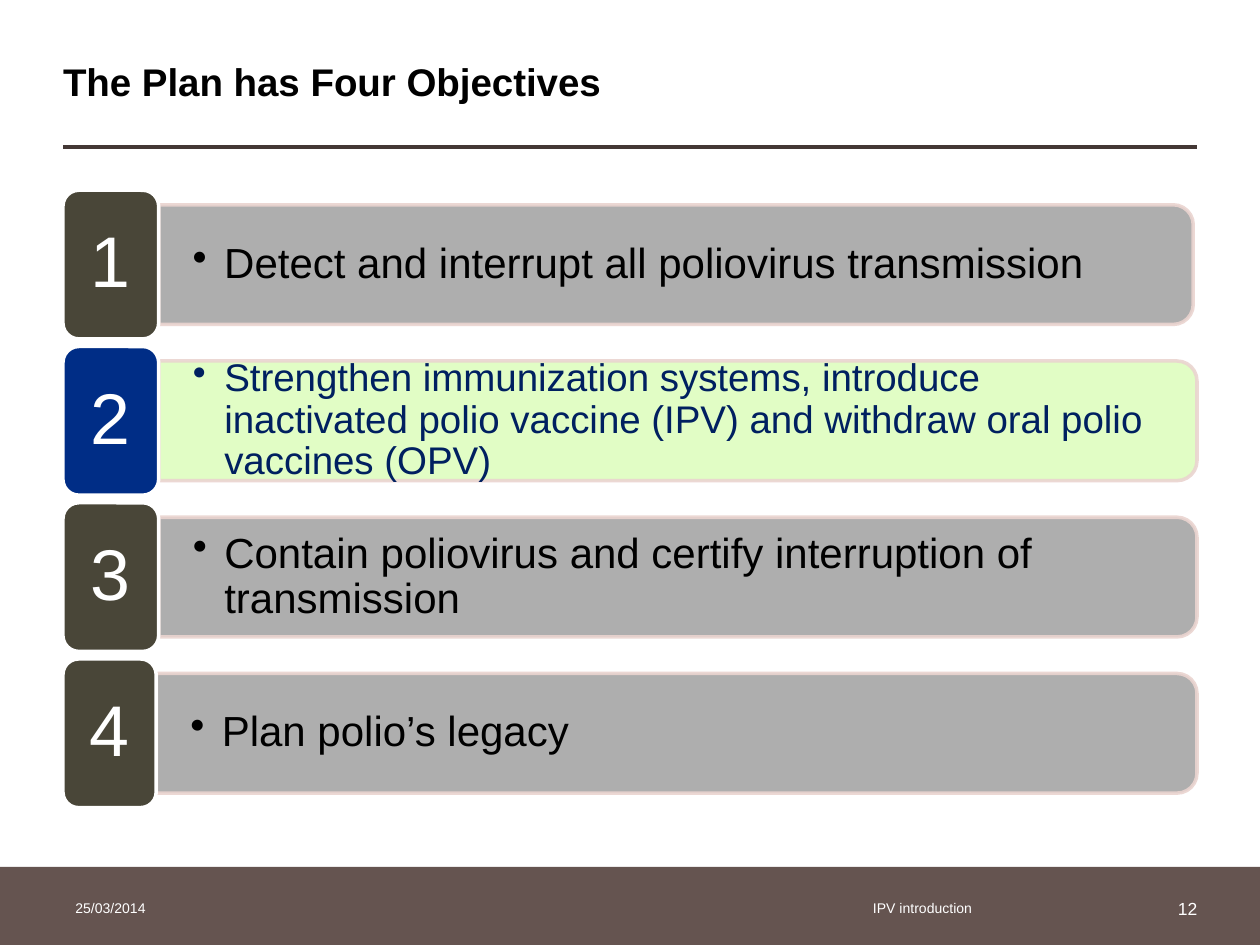
import pptx
import pptx.util
import pptx.dml.color
import pptx.enum.shapes
import pptx.enum.text
import pptx.oxml
import pptx.oxml.ns

Inches, Pt = pptx.util.Inches, pptx.util.Pt
SHAPE = pptx.enum.shapes.MSO_SHAPE
ALIGN = pptx.enum.text.PP_ALIGN
MIDDLE = pptx.enum.text.MSO_ANCHOR.MIDDLE
qn = pptx.oxml.ns.qn

COLORS = {
    "black": "000000", "white": "FFFFFF", "rule": "443835", "footer": "655450",
    "gray": "A6A6A6", "green": "DEFDBF", "edge": "EAD4D0",
    "olive": "494638", "blue": "002D86", "navy": "002060",
}
TITLE = "The Plan has Four Objectives"
# text, size, text colour, bar colour, badge colour, badge width, bar right edge
OBJECTIVES = [
    ("Detect and interrupt all poliovirus transmission",
     24, "black", "gray", "olive", 0.76, 9.47),
    ("Strengthen immunization systems, introduce inactivated polio vaccine (IPV) "
     "and withdraw oral polio vaccines (OPV)",
     22, "navy", "green", "blue", 0.76, 9.5),
    ("Contain poliovirus and certify interruption of transmission",
     24, "black", "gray", "olive", 0.76, 9.5),
    ("Plan polio’s legacy", 24, "black", "gray", "olive", 0.74, 9.5),
]
# text, left, width, size, alignment
FOOTER = [
    ("25/03/2014", 0.5, 2.33, 8, ALIGN.LEFT),
    ("IPV introduction", 6.83, 2.52, 8, ALIGN.LEFT),
    ("12", 9.18, 0.42, 10, ALIGN.RIGHT),
]
LEFT, FIRST_TOP, PITCH = 0.5, 1.51, 1.24
BADGE_H, BAR_H, TEXT_H = 1.18, 0.95, 0.85


def rgb(name):
    return pptx.dml.color.RGBColor.from_string(COLORS[name])


def add_block(s, kind, left, top, width, height, fill, line=None):
    sp = s.shapes.add_shape(kind, Inches(left), Inches(top), Inches(width), Inches(height))
    sp.shadow.inherit = False
    sp.fill.solid()
    sp.fill.fore_color.rgb = rgb(fill)
    if line:
        sp.line.color.rgb = rgb(line)
        sp.line.width = Pt(2)
    else:
        sp.line.fill.background()
    return sp


def add_text_box(s, left, top, width, height):
    tf = s.shapes.add_textbox(Inches(left), Inches(top), Inches(width), Inches(height)).text_frame
    tf.word_wrap = True
    tf.vertical_anchor = MIDDLE
    return tf


def write(tf, text, size, color, align=ALIGN.LEFT, spacing=None, bold=False):
    p = tf.paragraphs[0]
    p.alignment = align
    p.line_spacing = spacing
    r = p.add_run()
    r.text = text
    r.font.name = "Arial"
    r.font.size = Pt(size)
    r.font.bold = bold
    r.font.color.rgb = rgb(color)
    return p


def set_margins(tf, x, y):
    tf.margin_left = tf.margin_right = Inches(x)
    tf.margin_top = tf.margin_bottom = Inches(y)


def add_bullet(p):
    pPr = p._p.get_or_add_pPr()
    pPr.set("marL", str(Inches(0.25)))
    pPr.set("indent", str(Inches(-0.25)))
    pptx.oxml.ns  # namespace map used by qn
    bullet = pPr.makeelement(qn("a:buChar"), {"char": "•"})
    pPr.append(bullet)


def make_translucent(sp):
    """Give the fill and the line 90 % opacity."""
    for clr in sp._element.spPr.iter(qn("a:srgbClr")):
        clr.append(clr.makeelement(qn("a:alpha"), {"val": "90000"}))


def add_objective(s, number, text, size, color, bar_fill, badge_fill, badge_w, right):
    top = FIRST_TOP + (number - 1) * PITCH
    middle = top + BADGE_H / 2
    bar_left = LEFT + badge_w
    length = right - bar_left

    # The bar is drawn upright, then turned so its round corners face right.
    bar = add_block(s, SHAPE.ROUND_2_SAME_RECTANGLE, bar_left + (length - BAR_H) / 2,
                    middle - length / 2, BAR_H, length, bar_fill, "edge")
    bar.rotation = 90
    make_translucent(bar)

    tf = add_text_box(s, bar_left, middle - TEXT_H / 2, length - 0.05, TEXT_H)
    set_margins(tf, 0.27, 0.14)
    add_bullet(write(tf, text, size, color, spacing=0.9))

    badge = add_block(s, SHAPE.ROUNDED_RECTANGLE, LEFT, top, badge_w, BADGE_H,
                      badge_fill, "white")
    badge.text_frame.vertical_anchor = MIDDLE
    set_margins(badge.text_frame, 0.1, 0.1)
    write(badge.text_frame, str(number), 41, "white", ALIGN.CENTER, 0.9)


def main():
    prs = pptx.Presentation()
    prs.slide_width, prs.slide_height = Inches(10), Inches(7.5)
    s = prs.slides.add_slide(prs.slide_layouts[5])

    title = s.shapes.title
    title.left, title.top = Inches(LEFT), Inches(0.5)
    title.width, title.height = Inches(9), Inches(0.33)
    set_margins(title.text_frame, 0, 0)
    write(title.text_frame, TITLE, 22, "black", spacing=0.9, bold=True)

    rule = s.shapes.add_connector(pptx.enum.shapes.MSO_CONNECTOR.STRAIGHT,
                                  Inches(LEFT), Inches(1.17), Inches(9.5), Inches(1.17))
    rule.line.color.rgb = rgb("rule")
    rule.line.width = Pt(2.25)
    spPr = rule._element.spPr
    spPr.append(spPr.makeelement(qn("a:effectLst"), {}))

    for number, objective in enumerate(OBJECTIVES, 1):
        add_objective(s, number, *objective)

    add_block(s, SHAPE.RECTANGLE, 0, 6.88, 10, 0.62, "footer")
    for text, left, width, size, align in FOOTER:
        write(add_text_box(s, left, 7.01, width, 0.4), text, size, "white", align)

    prs.save("out.pptx")


if __name__ == "__main__":
    main()
